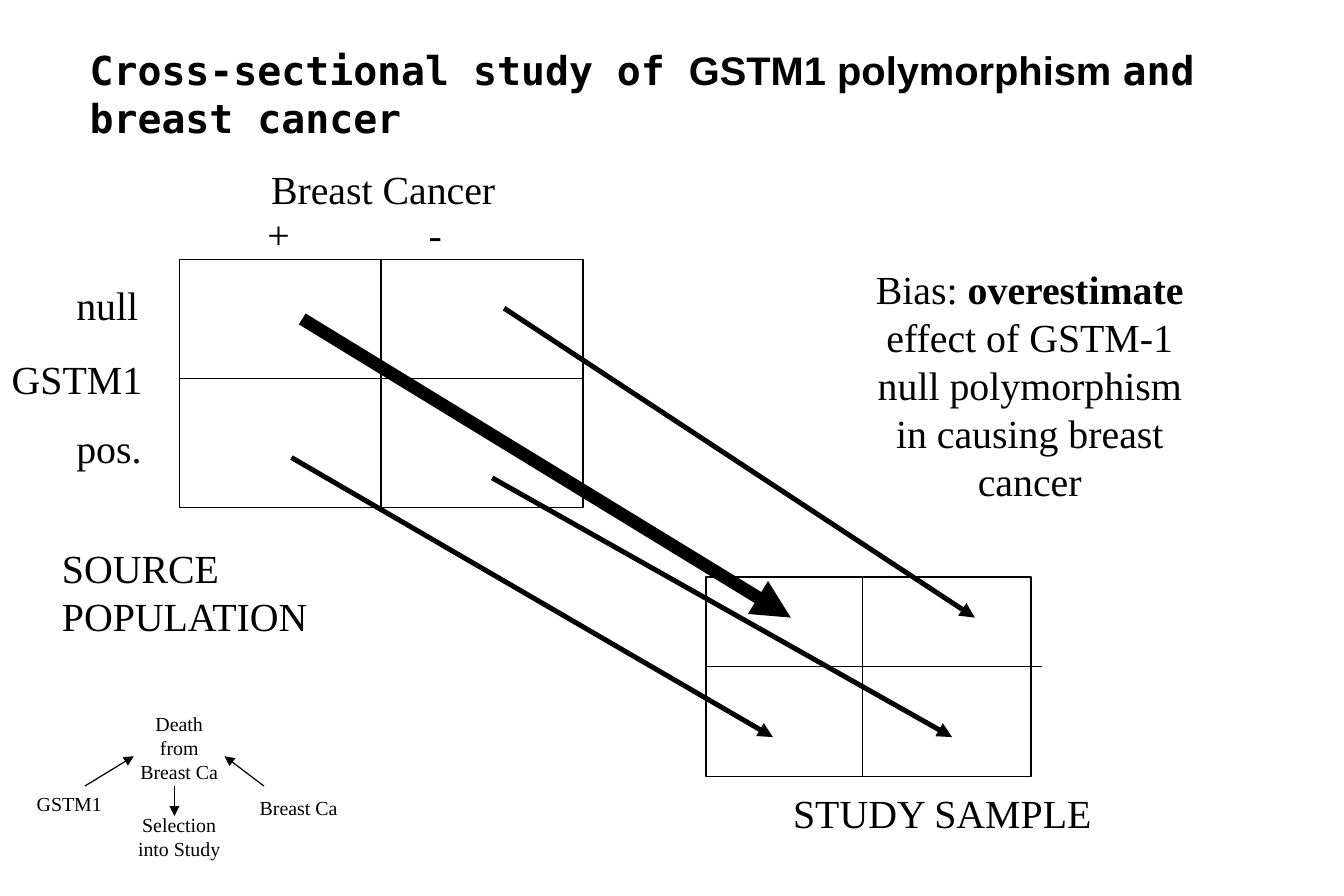
from collections import namedtuple

from lxml.etree import SubElement
from pptx import Presentation
from pptx.dml.color import RGBColor
from pptx.enum.shapes import MSO_CONNECTOR, MSO_SHAPE
from pptx.enum.text import MSO_ANCHOR, MSO_AUTO_SIZE, PP_ALIGN
from pptx.oxml.ns import qn
from pptx.util import Inches, Pt

COLORS = {"ink": "000000", "paper": "FFFFFF"}
SERIF, SANS, MONO = "Times New Roman", "Arial", "DejaVu Sans Mono"
Box = namedtuple("Box", "left top width height")


def color(name):
    return RGBColor.from_string(COLORS[name])


def add_run(paragraph, text, size=24, font=SERIF, bold=False):
    run = paragraph.add_run()
    run.text = text
    run.font.size = Pt(size)
    run.font.name = font
    run.font.bold = bold
    run.font.color.rgb = color("ink")


def add_text(shapes, box, runs, size=24, align=PP_ALIGN.LEFT, wrap=True):
    shape = shapes.add_textbox(*map(Inches, box))
    shape.text_frame.word_wrap = wrap
    paragraph = shape.text_frame.paragraphs[0]
    paragraph.alignment = align
    for text, bold in runs:
        add_run(paragraph, text, size, bold=bold)


def add_label(shapes, box, text, **options):
    add_text(shapes, box, [(text, False)], **options)


def add_line(shapes, start, end, width=0.75, arrow=False):
    connector = shapes.add_connector(
        MSO_CONNECTOR.STRAIGHT, *map(Inches, (*start, *end)))
    connector.line.color.rgb = color("ink")
    connector.line.width = Pt(width)
    if arrow:
        SubElement(connector.line._get_or_add_ln(), qn("a:tailEnd"), type="triangle")
    SubElement(connector._element.spPr, qn("a:effectLst"))


def add_title(slide, box):
    title = slide.shapes.title
    title.left, title.top, title.width, title.height = map(Inches, box)
    frame = title.text_frame
    frame.word_wrap = True
    frame.auto_size = MSO_AUTO_SIZE.NONE
    frame.vertical_anchor = MSO_ANCHOR.TOP
    paragraph = frame.paragraphs[0]
    paragraph.alignment = PP_ALIGN.LEFT
    for text, font in (("Cross-sectional study of ", MONO),
                       ("GSTM1 polymorphism ", SANS),
                       ("and breast cancer", MONO)):
        add_run(paragraph, text, font=font, bold=True)


def add_grid(shapes, box, column, row, overhang=0):
    frame = shapes.add_shape(MSO_SHAPE.RECTANGLE, *map(Inches, box))
    frame.shadow.inherit = False
    frame.fill.background()
    frame.line.color.rgb = color("ink")
    frame.line.width = Pt(0.75)
    middle, center = box.left + column, box.top + row
    add_line(shapes, (middle, box.top), (middle, box.top + box.height))
    add_line(shapes, (box.left, center), (box.left + box.width + overhang, center))


def add_source_population(shapes, box):
    add_grid(shapes, box, column=1.69, row=1)
    for text, left, top, width, wrap in (
            ("Breast Cancer", 0.67, -0.84, 2.08, False),
            ("+", 0.64, -0.46, 0.4, False),
            ("-", 1.99, -0.46, 0.4, False),
            ("null", -0.96, 0.13, 0.91, True),
            ("GSTM1", -1.5, 0.75, 1.3, False),
            ("pos.", -0.96, 1.33, 0.91, True)):
        add_label(shapes, Box(box.left + left, box.top + top, width, 0.5), text, wrap=wrap)
    add_label(shapes, Box(box.left - 1.08, box.top + 2.33, 2.5, 0.9), "SOURCE POPULATION")


def add_study_sample(shapes, box):
    add_grid(shapes, box, column=1.31, row=0.75, overhang=0.09)
    caption = Box(box.left + 0.63, box.top + box.height + 0.05, 2.71, 0.5)
    add_label(shapes, caption, "STUDY SAMPLE", wrap=False)


def add_selection_arrows(shapes, source, sample):
    for start, end, width in (
            ((1.03, 0.5), (0.71, 0.34), 7.75),
            ((0.94, 1.66), (0.56, 1.34), 3),
            ((2.72, 0.41), (2.25, 0.34), 3),
            ((2.62, 1.83), (2.06, 1.34), 3)):
        add_line(shapes,
                 (source.left + start[0], source.top + start[1]),
                 (sample.left + end[0], sample.top + end[1]), width, arrow=True)


def add_bias_note(shapes, box):
    add_text(shapes, box, [
        ("Bias: ", False), ("overestimate", True),
        (" effect of GSTM-1 null polymorphism in causing breast cancer", False),
    ], align=PP_ALIGN.CENTER)


def add_causal_diagram(slide, box):
    shapes = slide.shapes.add_group_shape().shapes
    for text, left, top, height in (
            ("GSTM1", 0, 0.67, 0.3),
            ("Breast Ca", 1.92, 0.7, 0.3),
            ("Death from Breast Ca", 0.92, 0, 0.71),
            ("Selection into Study", 0.92, 0.84, 0.5)):
        label = Box(box.left + left, box.top + top, box.width / 3, height)
        add_label(shapes, label, text, size=12, align=PP_ALIGN.CENTER)
    for start, end in (((0.59, 0.67), (1, 0.42)),
                       ((2.09, 0.67), (1.76, 0.42)),
                       ((1.34, 0.67), (1.34, 0.92))):
        add_line(shapes,
                 (box.left + start[0], box.top + start[1]),
                 (box.left + end[0], box.top + end[1]), arrow=True)


def main():
    presentation = Presentation()
    presentation.slide_width = Inches(11.25)
    presentation.slide_height = Inches(7.5)
    slide = presentation.slides.add_slide(presentation.slide_layouts[5])
    slide.background.fill.solid()
    slide.background.fill.fore_color.rgb = color("paper")

    source = Box(1.5, 2.17, 3.38, 2.08)
    sample = Box(5.91, 4.83, 2.72, 1.67)
    add_title(slide, Box(0.65, 0.33, 10.14, 0.9))
    add_source_population(slide.shapes, source)
    add_study_sample(slide.shapes, sample)
    add_selection_arrows(slide.shapes, source, sample)
    add_bias_note(slide.shapes, Box(7.12, 2.17, 3, 2.1))
    add_causal_diagram(slide, Box(0.12, 5.91, 2.76, 1.34))
    presentation.save("out.pptx")


if __name__ == "__main__":
    main()
